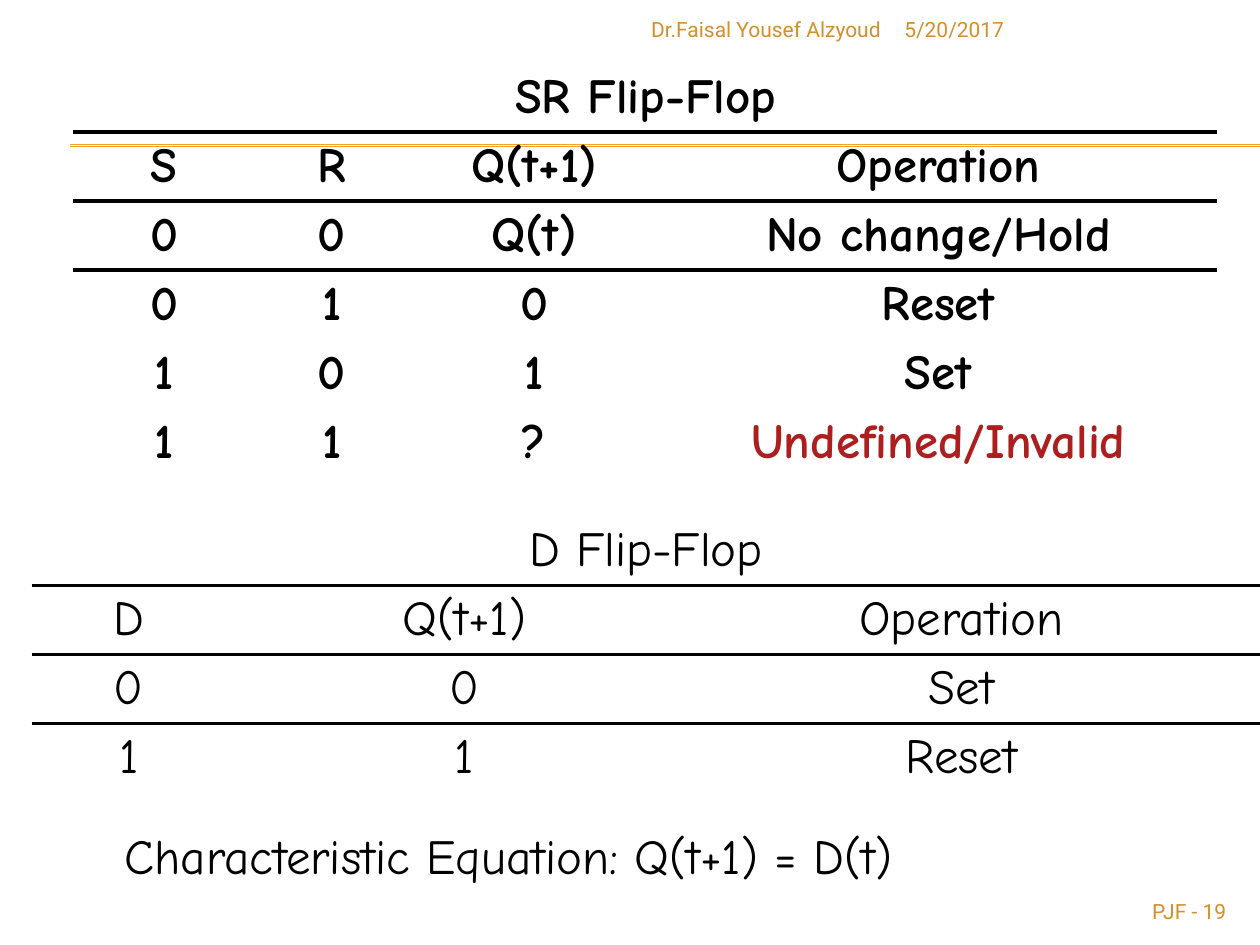
from lxml.etree import SubElement
from pptx import Presentation
from pptx.dml.color import RGBColor
from pptx.enum.shapes import MSO_CONNECTOR
from pptx.enum.text import PP_ALIGN
from pptx.oxml.ns import qn
from pptx.util import Cm, Pt

# Content
BLACK, RED, GOLD, AMBER = "000000", "AD1F1F", "D48F29", "F0A22E"
HAND, SANS = "Comic Neue", "Roboto"
PLAIN = "{2D5ABB26-0587-4C30-8999-92F81FD0307C}"  # no style, no grid

TABLES = [
    dict(left=1.48, top=1.27, cols=[3.66, 3.1, 5.05, 11.25], bold=True,
         heights=[1.39] * 6,
         rows=[["SR Flip-Flop"],
               ["S", "R", "Q(t+1)", "Operation"],
               ["0", "0", "Q(t)", "No change/Hold"],
               ["0", "1", "0", "Reset"],
               ["1", "0", "1", "Set"],
               ["1", "1", "?", "Undefined/Invalid"]]),
    dict(left=0.64, top=10.41, cols=[3.91, 0.81, 8, 12.04], bold=False,
         heights=[1.39] * 4 + [1.19] * 2,
         rows=[["D Flip-Flop"],
               ["D", "", "Q(t+1)", "Operation"],
               ["0", "", "0", "Set"],
               ["1", "", "1", "Reset"],
               [], []]),
]

# words, (left, top, width, height), alignment, size, font, colour, wrap
NOTES = [
    ("Characteristic Equation: Q(t+1) = D(t)", (1.27, 16.51, 17.96, 1.63),
     PP_ALIGN.CENTER, 28, HAND, BLACK, False),
    ("5/20/2017", (17.98, 0.2, 6.99, 0.81),
     PP_ALIGN.LEFT, 12, SANS, GOLD, True),
    ("PJF - 19", (22.86, 17.98, 2.11, 0.69),
     PP_ALIGN.RIGHT, 12, SANS, GOLD, True),
    ("Dr.Faisal Yousef Alzyoud", (8.69, 0.2, 9.32, 0.81),
     PP_ALIGN.RIGHT, 12, SANS, GOLD, True),
]
RULES = [2.92, 2.95]  # heights of the twin header lines


# Helpers
def tint(color, code):
    color.rgb = RGBColor.from_string(code)


def write(frame, words, align, size, face, code, bold=False):
    para = frame.paragraphs[0]
    para.alignment = align
    run = para.add_run()
    run.text = words
    run.font.size, run.font.name, run.font.bold = Pt(size), face, bold
    tint(run.font.color, code)


def edge(cell, side):
    line = SubElement(cell._tc.get_or_add_tcPr(), qn("a:ln" + side),
                      w=str(Pt(2.25)))
    fill = SubElement(line, qn("a:solidFill"))
    SubElement(fill, qn("a:srgbClr"), val=BLACK)


def draw_table(slide, left, top, cols, heights, rows, bold):
    table = slide.shapes.add_table(
        len(rows), len(cols), Cm(left), Cm(top),
        Cm(sum(cols)), Cm(sum(heights))).table
    table.first_row = table.horz_banding = False
    table._tbl.tblPr.find(qn("a:tableStyleId")).text = PLAIN
    for col, width in zip(table.columns, cols):
        col.width = Cm(width)
    for row, height in zip(table.rows, heights):
        row.height = Cm(height)
    table.cell(0, 0).merge(table.cell(0, len(cols) - 1))

    # Lines run above and below the heading row
    for y, row in enumerate(table.rows):
        for cell in row.cells:
            if y in (1, 2):
                edge(cell, "T")
            if y in (0, 1):
                edge(cell, "B")
            cell.fill.background()
        for cell, words in zip(row.cells, rows[y]):
            if words:
                code = RED if words.startswith("Undefined") else BLACK
                write(cell.text_frame, words, PP_ALIGN.CENTER, 28, HAND,
                      code, bold)


def main():
    deck = Presentation()
    deck.slide_width, deck.slide_height = Cm(25.4), Cm(19.05)
    slide = deck.slides.add_slide(deck.slide_layouts[6])

    # Header lines
    for y in RULES:
        rule = slide.shapes.add_connector(
            MSO_CONNECTOR.STRAIGHT, Cm(1.42), Cm(y), Cm(25.4), Cm(y))
        rule.line.width = Pt(0.75)
        tint(rule.line.color, AMBER)
        SubElement(rule._element.spPr, qn("a:effectLst"))

    # Truth tables
    for spec_row in TABLES:
        draw_table(slide, **spec_row)

    # Equation, date, page number and author
    for words, place, align, size, face, code, wrap in NOTES:
        frame = slide.shapes.add_textbox(*map(Cm, place)).text_frame
        frame.word_wrap = wrap
        write(frame, words, align, size, face, code)

    deck.save("out.pptx")


if __name__ == "__main__":
    main()
